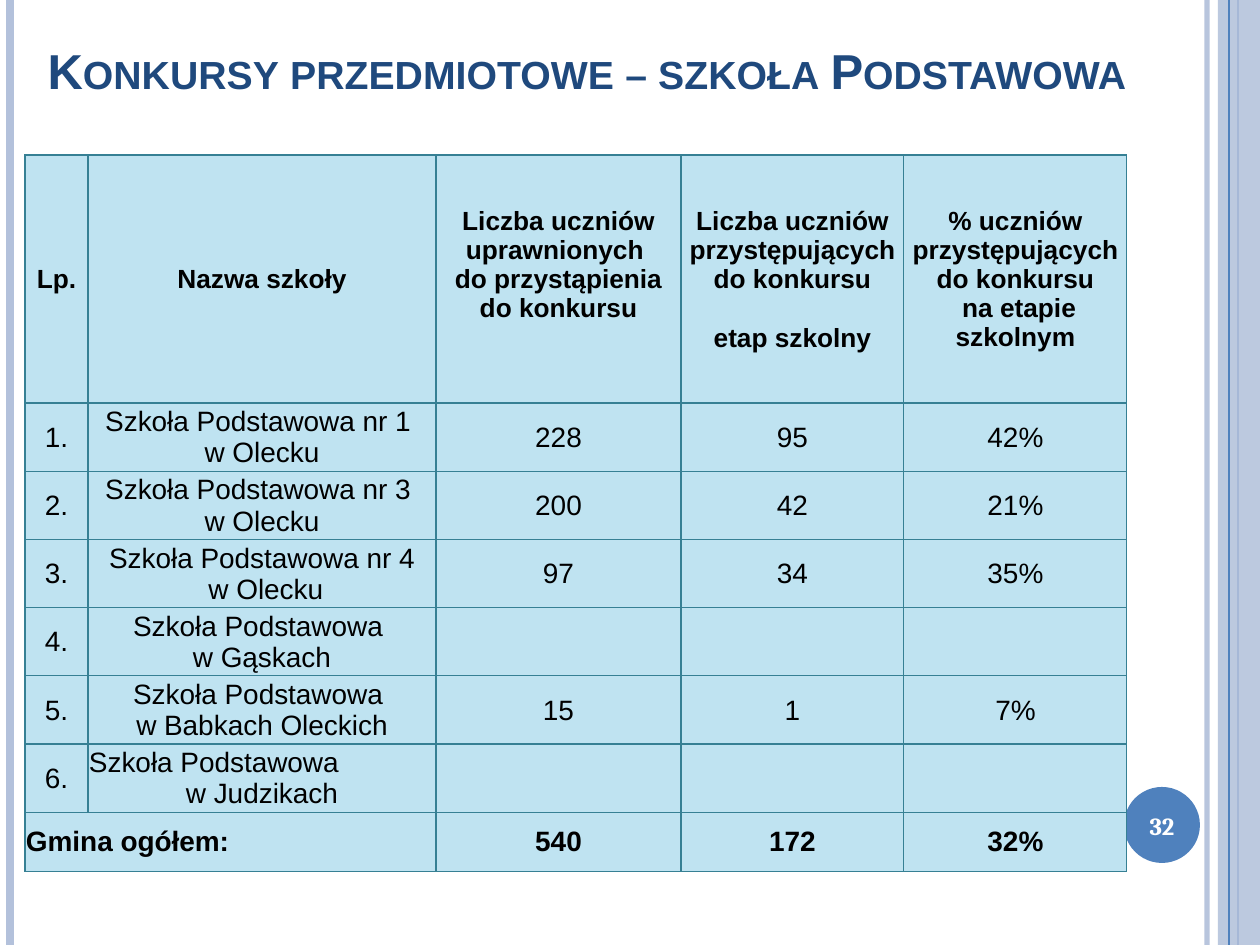
"""Build the slide with the school contest table."""
import dataclasses

import lxml.etree
import pptx
import pptx.dml.color
import pptx.enum.shapes
import pptx.enum.text
import pptx.oxml.ns
import pptx.util

SCALE = 914400 / 126
WIDE, HIGH = 1260, 945
INK = {"pale": "B3C1DB", "blue": "4F81BD", "navy": "1F497D", "white": "FFFFFF",
       "black": "000000", "cell": "BFE3F1", "edge": "368094"}
ALIGN = pptx.enum.text.PP_ALIGN
MIDDLE = pptx.enum.text.MSO_ANCHOR.MIDDLE
SHAPE = pptx.enum.shapes.MSO_SHAPE
qn = pptx.oxml.ns.qn


@dataclasses.dataclass
class Stripe:
    x: int
    ink: str
    width: float
    alpha: int = 100


@dataclasses.dataclass
class Block:
    kind: int
    box: tuple[int, int, int, int]
    ink: str
    alpha: int = 100


@dataclasses.dataclass
class Style:
    size: int
    ink: str = "black"
    bold: bool = False
    font: str = "Arial"


STRIPES = [Stripe(1207, "pale", 3, 93), Stripe(10, "pale", 4.5),
           Stripe(1238, "blue", 1.5)]
BAND = Block(SHAPE.RECTANGLE, (1218, 0, 42, HIGH), "pale", 87)
RULE = Stripe(1229, "blue", 0.75)
BADGE = Block(SHAPE.OVAL, (1124, 787, 76, 76), "blue")

COLS = [63, 348, 245, 223, 223]
ROWS = [248] + [68] * 6 + [59]
HEAD = ["Lp.", "Nazwa szkoły",
        "Liczba uczniów uprawnionych \vdo przystąpienia do konkursu",
        "Liczba uczniów przystępujących do konkursu\n etap szkolny ",
        "% uczniów przystępujących do konkursu\n na etapie szkolnym"]
SCHOOLS = [
    ("Szkoła Podstawowa nr 1 \nw Olecku", "228", "95", "42%"),
    ("Szkoła Podstawowa nr 3 \nw Olecku", "200", "42", "21%"),
    ("Szkoła Podstawowa nr 4\n w Olecku", "97", "34", "35%"),
    ("Szkoła Podstawowa \nw Gąskach", "", "", ""),
    ("Szkoła Podstawowa \nw Babkach Oleckich", "15", "1", "7%"),
    ("Szkoła Podstawowa\nw Judzikach", "", "", ""),
]
TOTAL = ["Gmina ogółem:", "", "540", "172", "32%"]


def px(count: int) -> int:
    return round(count * SCALE)


def tint(name: str) -> pptx.dml.color.RGBColor:
    return pptx.dml.color.RGBColor.from_string(INK[name])


def fade(shape, alpha: int) -> None:
    if alpha < 100:
        node = next(shape._element.spPr.iter(qn("a:srgbClr")))
        lxml.etree.SubElement(node, qn("a:alpha"), val=str(alpha * 1000))


def draw_stripe(slide, stripe: Stripe) -> None:
    line = slide.shapes.add_connector(pptx.enum.shapes.MSO_CONNECTOR.STRAIGHT,
                                      px(stripe.x), 0, px(stripe.x), px(HIGH))
    line.line.color.rgb = tint(stripe.ink)
    line.line.width = pptx.util.Pt(stripe.width)
    fade(line, stripe.alpha)
    lxml.etree.SubElement(line._element.spPr, qn("a:effectLst"))


def draw_block(slide, block: Block) -> None:
    shape = slide.shapes.add_shape(block.kind, *map(px, block.box))
    shape.shadow.inherit = False
    shape.fill.solid()
    shape.fill.fore_color.rgb = tint(block.ink)
    shape.line.fill.background()
    fade(shape, block.alpha)


def write(frame, text: str, style: Style, align=ALIGN.CENTER) -> None:
    frame.text = text
    frame.word_wrap = True
    for para in frame.paragraphs:
        para.alignment = align
        for run in para.runs:
            run.font.name = style.font
            run.font.size = pptx.util.Pt(style.size)
            run.font.bold = style.bold
            run.font.color.rgb = tint(style.ink)


def draw_edge(cell) -> None:
    props = cell._tc.get_or_add_tcPr()
    for spot, side in enumerate(("lnL", "lnR", "lnT", "lnB")):
        line = lxml.etree.Element(qn("a:" + side), w=str(pptx.util.Pt(0.75)))
        fill = lxml.etree.SubElement(line, qn("a:solidFill"))
        lxml.etree.SubElement(fill, qn("a:srgbClr"), val=INK["edge"])
        props.insert(spot, line)


def draw_cell(cell, text: str, style: Style) -> None:
    cell.margin_left = cell.margin_right = cell.margin_top = px(1)
    cell.margin_bottom = 0
    cell.vertical_anchor = MIDDLE
    cell.fill.solid()
    cell.fill.fore_color.rgb = tint("cell")
    draw_edge(cell)
    if text:
        write(cell.text_frame, text, style)


def draw_table(slide) -> None:
    frame = slide.shapes.add_table(len(ROWS), len(COLS), px(25), px(155),
                                   px(sum(COLS)), px(sum(ROWS)))
    table = frame.table
    table.first_row = table.horz_banding = False
    for col, width in zip(table.columns, COLS):
        col.width = px(width)
    for row, height in zip(table.rows, ROWS):
        row.height = px(height)
    body = [(f"{num}.", *school) for num, school in enumerate(SCHOOLS, 1)]
    styles = [Style(15, bold=True)] + [Style(16)] * len(body) + [Style(16, bold=True)]
    for r, (texts, style) in enumerate(zip([HEAD, *body, TOTAL], styles)):
        for c, text in enumerate(texts):
            draw_cell(table.cell(r, c), text, style)
    last = len(ROWS) - 1
    table.cell(last, 0).merge(table.cell(last, 1))
    for cell in (table.cell(last, 0), table.cell(last - 1, 1)):
        cell.text_frame.paragraphs[0].alignment = ALIGN.LEFT
    table.cell(0, 2).margin_bottom = px(29)
    table.cell(0, 3).text_frame.paragraphs[1].space_before = pptx.util.Pt(17)


def draw_title(slide) -> None:
    title = slide.shapes.title
    title.left, title.top, title.width, title.height = map(px, (35, 0, 1160, 106))
    frame = title.text_frame
    write(frame, "Konkursy przedmiotowe – szkoła Podstawowa",
          Style(28, "navy", True), ALIGN.LEFT)
    frame.auto_size = pptx.enum.text.MSO_AUTO_SIZE.NONE
    frame.vertical_anchor = pptx.enum.text.MSO_ANCHOR.BOTTOM
    frame.paragraphs[0].runs[0].font._element.set("cap", "small")


def draw_page(slide) -> None:
    box = slide.shapes.add_textbox(*map(px, (1120, 790, 84, 72)))
    box.text_frame.vertical_anchor = MIDDLE
    write(box.text_frame, "32", Style(14, "white", True, "Cambria"))


def main() -> None:
    deck = pptx.Presentation()
    deck.slide_width, deck.slide_height = px(WIDE), px(HIGH)
    slide = deck.slides.add_slide(deck.slide_layouts[5])
    for stripe in STRIPES:
        draw_stripe(slide, stripe)
    draw_block(slide, BAND)
    draw_stripe(slide, RULE)
    draw_block(slide, BADGE)
    draw_title(slide)
    draw_page(slide)
    draw_table(slide)
    deck.save("out.pptx")


if __name__ == "__main__":
    main()
